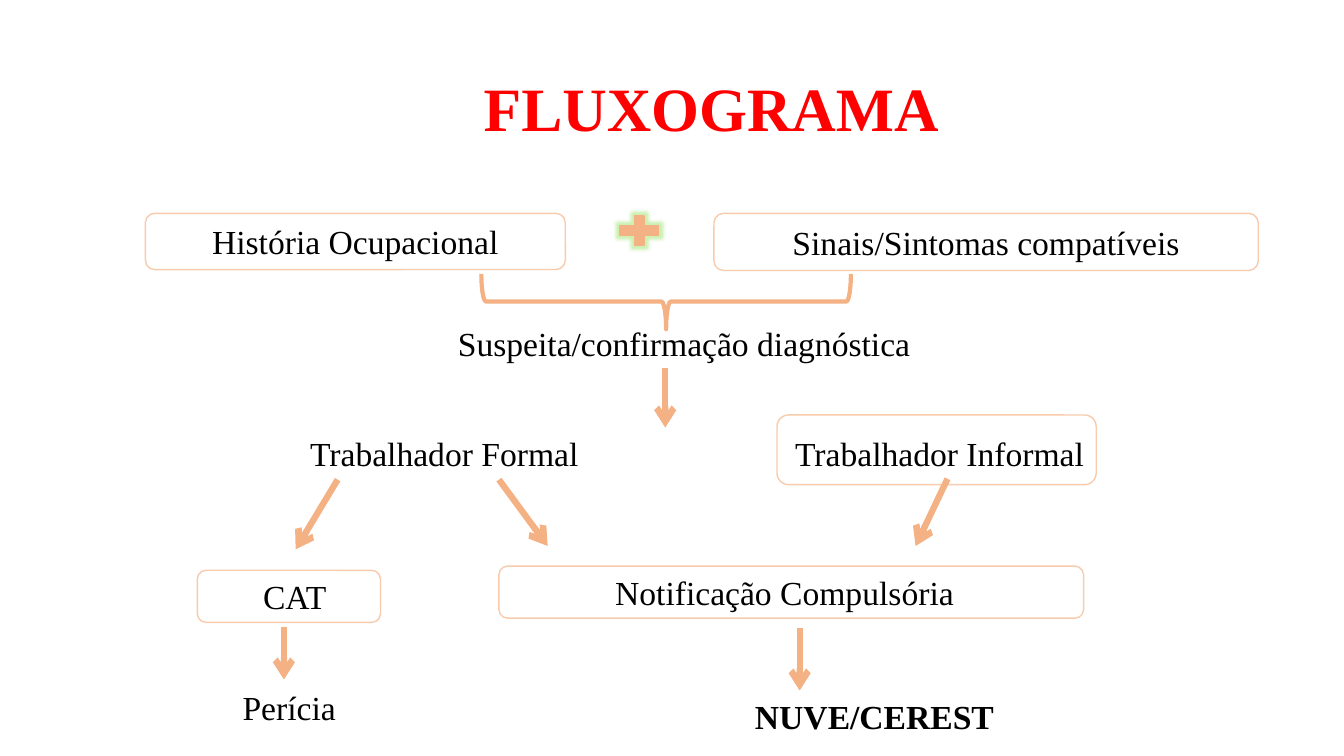
"""Build the FLUXOGRAMA slide on a grid of 160 columns by 90 rows."""
from dataclasses import dataclass

from lxml import etree
from pptx import Presentation
from pptx.dml.color import RGBColor
from pptx.enum.shapes import MSO_CONNECTOR, MSO_SHAPE
from pptx.enum.text import MSO_ANCHOR, PP_ALIGN
from pptx.oxml.ns import qn
from pptx.util import Inches, Length, Pt

ROUNDED = MSO_SHAPE.ROUNDED_RECTANGLE
PLUS = MSO_SHAPE.MATH_PLUS
BRACE = MSO_SHAPE.RIGHT_BRACE
STRAIGHT = MSO_CONNECTOR.STRAIGHT
LEFT, CENTER = PP_ALIGN.LEFT, PP_ALIGN.CENTER
MIDDLE, TOP = MSO_ANCHOR.MIDDLE, MSO_ANCHOR.TOP

COLORS = {
    "title": "FF0000",
    "text": "000000",
    "box": "FFFFFF",
    "outline": "F8CBAD",
    "accent": "F4B183",
    "glow": "7EDB3F",
}
FONT = "Times New Roman"
COLS, ROWS = 160, 90
WIDTH, HEIGHT = Inches(13.333), Inches(7.5)


@dataclass(frozen=True)
class Area:
    col: float
    row: float
    cols: float
    rows: float


@dataclass(frozen=True)
class Box:
    text: str
    area: Area
    fill: str | None = None
    shift: float = 0
    drop: float = 0


@dataclass(frozen=True)
class Label:
    text: str
    area: Area
    align: PP_ALIGN = CENTER
    bold: bool = False


@dataclass(frozen=True)
class Arrow:
    start: tuple[float, float]
    end: tuple[float, float]


TITLE = Area(19.9, 4.4, 129.6, 17.8)
PLUS_AREA = Area(73, 25.1, 6.2, 4.7)
BRACE_AREA = Area(76, 13.9, 6.6, 44)

BOXES = [
    Box("História Ocupacional", Area(17.3, 25.4, 50, 6.7), "box"),
    Box("Sinais/Sintomas compatíveis", Area(85, 25.4, 64.8, 6.8), "box"),
    Box("Trabalhador Informal", Area(92.5, 49.4, 38, 8.3), shift=0.36, drop=0.4),
    Box("CAT", Area(23.5, 67.9, 21.8, 6.2), shift=0.7),
    Box("Notificação Compulsória", Area(59.4, 67.4, 69.6, 6.2), shift=-0.8),
]
LABELS = [
    Label("Suspeita/confirmação diagnóstica", Area(37.7, 37.8, 87.5, 6)),
    Label("Trabalhador Formal", Area(32.9, 51, 40, 6)),
    Label("Perícia", Area(27.7, 81.2, 25, 6), LEFT),
    Label("NUVE/CEREST", Area(88.7, 82.2, 34.3, 6), LEFT, True),
]
ARROWS = [
    Arrow((79.2, 43.8), (79.2, 50.9)),
    Arrow((59.4, 57.1), (65.2, 65)),
    Arrow((112.8, 57), (109, 65)),
    Arrow((40.2, 57.1), (35.2, 65.4)),
    Arrow((95.2, 74.8), (95.2, 82.2)),
    Arrow((33.8, 74.6), (33.8, 80.9)),
]


def x(cols: float) -> Length:
    return Length(round(WIDTH * cols / COLS))


def y(rows: float) -> Length:
    return Length(round(HEIGHT * rows / ROWS))


def place(area: Area) -> tuple[Length, Length, Length, Length]:
    return x(area.col), y(area.row), x(area.cols), y(area.rows)


def rgb(name: str) -> RGBColor:
    return RGBColor.from_string(COLORS[name])


def write(tf, text: str, *, size: float = 24, color: str = "text",
          bold: bool = False, align: PP_ALIGN = CENTER,
          anchor: MSO_ANCHOR = MIDDLE, spacing: float = 1.0) -> None:
    tf.word_wrap = True
    tf.vertical_anchor = anchor
    p = tf.paragraphs[0]
    p.alignment = align
    p.line_spacing = spacing
    r = p.add_run()
    r.text = text
    r.font.name = FONT
    r.font.size = Pt(size)
    r.font.bold = bold
    r.font.color.rgb = rgb(color)


def add_shape(s, kind: MSO_SHAPE, area: Area, line: str,
              weight: float = 1, fill: str | None = None):
    sp = s.shapes.add_shape(kind, *place(area))
    sp.shadow.inherit = False
    sp.line.color.rgb = rgb(line)
    sp.line.width = Pt(weight)
    if fill:
        sp.fill.solid()
        sp.fill.fore_color.rgb = rgb(fill)
    else:
        sp.fill.background()
    return sp


def add_box(s, box: Box) -> None:
    sp = add_shape(s, ROUNDED, box.area, "outline", fill=box.fill)
    tf = sp.text_frame
    tf.margin_left = x(max(0, 2 * box.shift))
    tf.margin_right = x(max(0, -2 * box.shift))
    tf.margin_top = y(2 * box.drop)
    tf.margin_bottom = 0
    write(tf, box.text)


def add_label(s, label: Label) -> None:
    sp = s.shapes.add_textbox(*place(label.area))
    write(sp.text_frame, label.text, align=label.align, bold=label.bold, anchor=TOP)


def add_arrow(s, arrow: Arrow) -> None:
    (x1, y1), (x2, y2) = arrow.start, arrow.end
    cn = s.shapes.add_connector(STRAIGHT, x(x1), y(y1), x(x2), y(y2))
    cn.line.color.rgb = rgb("accent")
    cn.line.width = Pt(4.5)
    etree.SubElement(cn.line._get_or_add_ln(), qn("a:tailEnd"), type="arrow")
    etree.SubElement(cn._element.spPr, qn("a:effectLst"))


def add_glow(sp, color: str) -> None:
    effects = sp._element.spPr.find(qn("a:effectLst"))
    glow = etree.SubElement(effects, qn("a:glow"), rad=str(Pt(5)))
    tint = etree.SubElement(glow, qn("a:srgbClr"), val=COLORS[color])
    etree.SubElement(tint, qn("a:alpha"), val="40000")


def main() -> None:
    prs = Presentation()
    prs.slide_width, prs.slide_height = WIDTH, HEIGHT
    s = prs.slides.add_slide(prs.slide_layouts.get_by_name("Title Only"))
    title = s.shapes.title
    title.left, title.top, title.width, title.height = place(TITLE)
    write(title.text_frame, "FLUXOGRAMA", size=44, color="title", bold=True, spacing=0.9)

    for box in BOXES:
        add_box(s, box)
    plus = add_shape(s, PLUS, PLUS_AREA, "accent", fill="accent")
    add_glow(plus, "glow")
    brace = add_shape(s, BRACE, BRACE_AREA, "accent", 3)
    brace.rotation = 90
    for label in LABELS:
        add_label(s, label)
    for arrow in ARROWS:
        add_arrow(s, arrow)
    prs.save("out.pptx")


if __name__ == "__main__":
    main()
